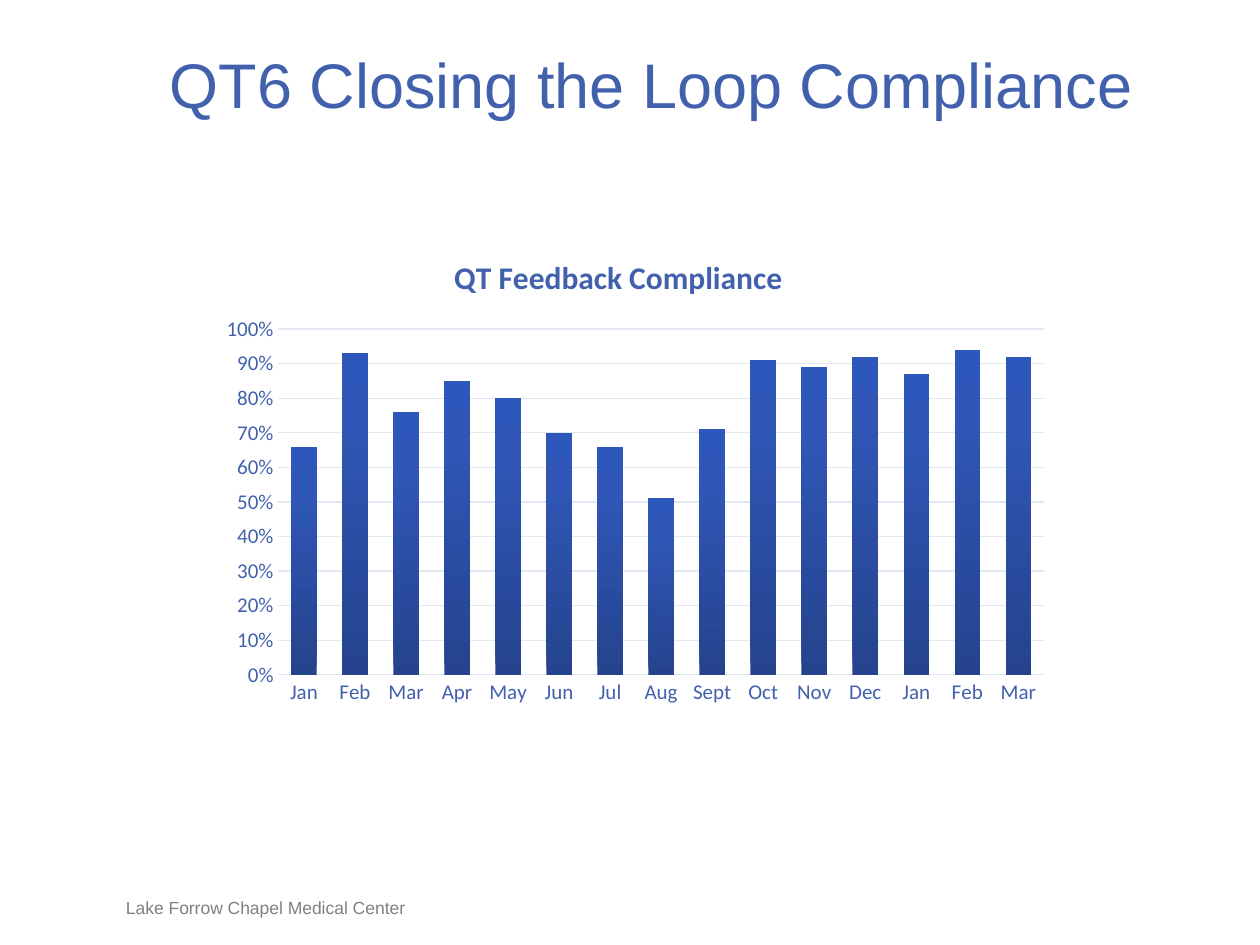
import copy

import pptx
import pptx.chart.data
import pptx.dml.color
import pptx.enum.chart
import pptx.enum.text
import pptx.oxml
import pptx.oxml.ns
import pptx.util

HEADING_BLUE = pptx.dml.color.RGBColor(0x42, 0x61, 0xAD)
FOOTER_GRAY = pptx.dml.color.RGBColor(0x80, 0x80, 0x80)
GRID_BLUE = pptx.dml.color.RGBColor(0xE2, 0xE7, 0xF4)
BAR_STOPS = [
    (0, pptx.dml.color.RGBColor(0x25, 0x43, 0x8D)),
    (0.8, pptx.dml.color.RGBColor(0x30, 0x57, 0xB7)),
    (1, pptx.dml.color.RGBColor(0x2E, 0x57, 0xBB)),
]
MONTHS = ["Jan", "Feb", "Mar", "Apr", "May", "Jun", "Jul", "Aug", "Sept",
          "Oct", "Nov", "Dec", "Jan", "Feb", "Mar"]
COMPLIANCE = [0.66, 0.93, 0.76, 0.85, 0.8, 0.7, 0.66, 0.51, 0.71,
              0.91, 0.89, 0.92, 0.87, 0.94, 0.92]


class ComplianceSlide:
    """Holds the slide and its style; lengths are columns and rows of a one-inch grid."""

    text_font = "Arial"
    chart_font = "Calibri"

    def __init__(self, deck):
        self.slide = deck.slides.add_slide(deck.slide_layouts[5])
        self.column = deck.slide_width / 10
        self.row = deck.slide_height / 7.5

    def box(self, left, top, width, height):
        return (int(left * self.column), int(top * self.row),
                int(width * self.column), int(height * self.row))

    def style(self, font, name, size, color, bold=False):
        font.name, font.size, font.bold = name, pptx.util.Pt(size), bold
        font.color.rgb = color

    def fill_text(self, holder, text, size, color, align, anchor):
        frame = holder.text_frame
        frame.margin_left = frame.margin_right = frame.margin_top = frame.margin_bottom = 0
        frame.word_wrap = True
        frame.vertical_anchor = anchor
        frame.text = text
        frame.paragraphs[0].alignment = align
        self.style(frame.paragraphs[0].font, self.text_font, size, color)

    def title(self, text, *place):
        heading = self.slide.shapes.title
        heading.left, heading.top, heading.width, heading.height = self.box(*place)
        self.fill_text(heading, text, 36, HEADING_BLUE, pptx.enum.text.PP_ALIGN.CENTER,
                       pptx.enum.text.MSO_ANCHOR.TOP)

    def footer(self, text, *place):
        self.fill_text(self.slide.shapes.add_textbox(*self.box(*place)), text, 10, FOOTER_GRAY,
                       pptx.enum.text.PP_ALIGN.LEFT, pptx.enum.text.MSO_ANCHOR.BOTTOM)

    def layout(self, parent, index, target=None, **shares):
        for old in parent.findall(pptx.oxml.ns.qn("c:layout")):
            parent.remove(old)
        inner = f'<c:layoutTarget val="{target}"/>' if target else ""
        modes = "".join(f'<c:{axis}Mode val="edge"/>' for axis in "xy")
        sizes = "".join(f'<c:{side} val="{share}"/>' for side, share in shares.items())
        parent.insert(index, pptx.oxml.parse_xml(
            f'<c:layout {pptx.oxml.ns.nsdecls("c")}><c:manualLayout>'
            f'{inner}{modes}{sizes}</c:manualLayout></c:layout>'))

    def axis(self, axis):
        self.style(axis.tick_labels.font, self.chart_font, 12, HEADING_BLUE)
        axis.major_tick_mark = axis.minor_tick_mark = pptx.enum.chart.XL_TICK_MARK.NONE

    def grid_line(self, line):
        line.color.rgb = GRID_BLUE
        line.width = pptx.util.Pt(0.75)

    def gradient(self, series):
        fill = series.format.fill
        fill.gradient()
        fill.gradient_angle = 90
        stop_list = series._element.xpath(".//a:gsLst")[0]
        stop_list.append(copy.deepcopy(stop_list[-1]))
        for stop, (position, color) in zip(fill.gradient_stops, BAR_STOPS):
            stop.position = position
            stop.color.rgb = color

    def column_chart(self, heading, months, shares, *place):
        data = pptx.chart.data.CategoryChartData(number_format="0%")
        data.categories = months
        data.add_series("Series 1", shares)
        chart = self.slide.shapes.add_chart(
            pptx.enum.chart.XL_CHART_TYPE.COLUMN_CLUSTERED, *self.box(*place), data).chart
        chart.font.name, chart.font.size = self.chart_font, pptx.util.Pt(10)
        chart.has_legend = False

        caption = chart.chart_title.text_frame
        caption.text = heading
        self.style(caption.paragraphs[0].font, self.chart_font, 18, HEADING_BLUE, bold=True)
        self.layout(chart.chart_title._element, 1, x=0.28, y=0.06)
        self.layout(chart._chartSpace.chart.plotArea, 0, "inner", x=0.08, y=0.22, w=0.9, h=0.7)

        self.axis(chart.category_axis)
        self.grid_line(chart.category_axis.format.line)
        percent = chart.value_axis
        self.axis(percent)
        percent.minimum_scale, percent.maximum_scale, percent.major_unit = 0, 1, 0.1
        percent.tick_labels.number_format = "0%"
        percent.tick_labels.number_format_is_linked = False
        percent.format.line.fill.background()
        self.grid_line(percent.major_gridlines.format.line)

        bars = chart.plots[0]
        bars.gap_width, bars.overlap, bars.vary_by_categories = 100, -24, False
        bars.series[0].invert_if_negative = False
        self.gradient(bars.series[0])


def main():
    deck = pptx.Presentation()
    deck.slide_width, deck.slide_height = pptx.util.Inches(10), pptx.util.Inches(7.5)
    page = ComplianceSlide(deck)
    page.footer("Lake Forrow Chapel Medical Center", 1, 7.12, 3.17, 0.17)
    page.title("QT6 Closing the Loop Compliance", 0.92, 0.36, 8.5, 0.61)
    page.column_chart("QT Feedback Compliance", MONTHS, COMPLIANCE, 1.67, 1.75, 6.75, 3.92)
    deck.save("out.pptx")


if __name__ == "__main__":
    main()
